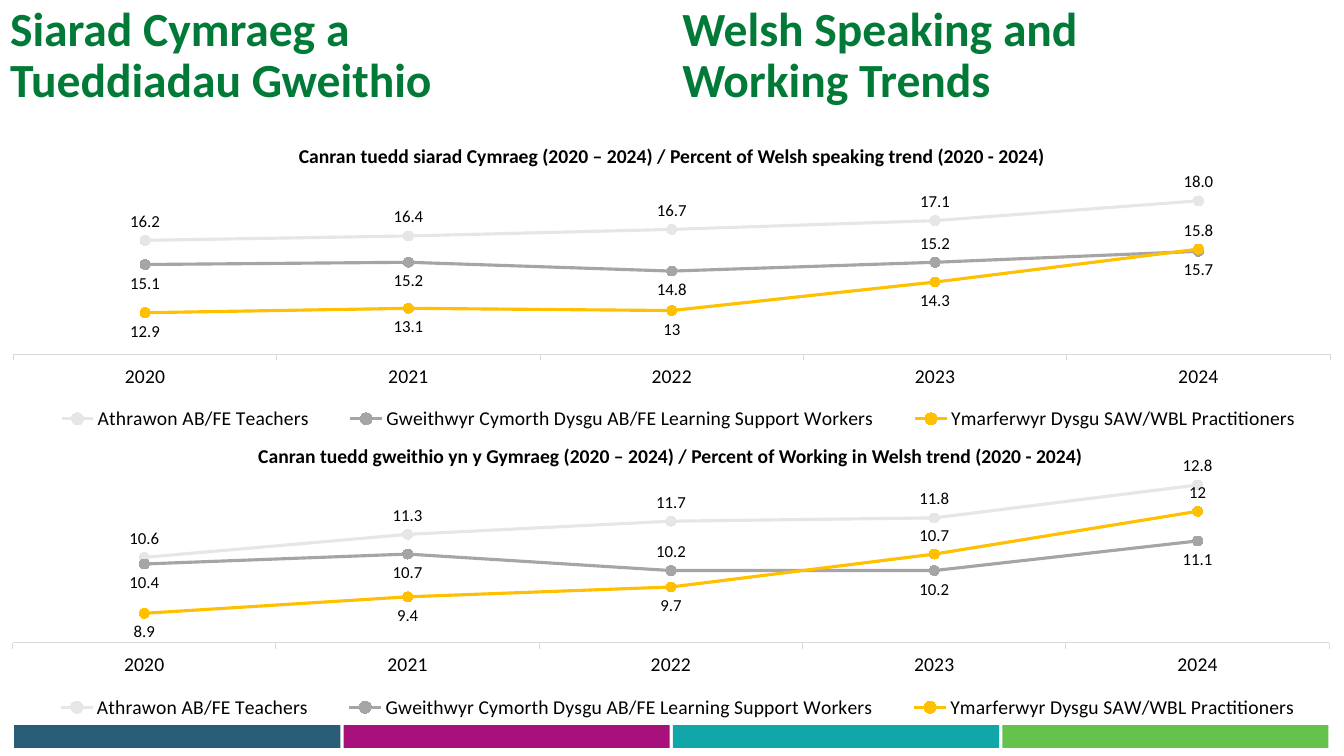
from lxml.etree import SubElement
from pptx import Presentation
from pptx.chart.data import CategoryChartData
from pptx.dml.color import RGBColor
from pptx.enum.chart import (XL_CHART_TYPE, XL_LABEL_POSITION, XL_LEGEND_POSITION,
                             XL_MARKER_STYLE, XL_TICK_MARK)
from pptx.enum.shapes import MSO_SHAPE
from pptx.enum.text import MSO_ANCHOR, MSO_AUTO_SIZE, PP_ALIGN
from pptx.oxml.ns import qn
from pptx.util import Cm, Pt

COLOURS = {
    "heading": "017A37", "text": "000000", "axis": "D9D9D9",
    "teachers": "E7E6E6", "support": "A5A5A5", "practitioners": "FFC000",
    "navy": "295D75", "magenta": "A8117C", "teal": "11A6A8", "green": "65C24C",
}
YEARS = ["2020", "2021", "2022", "2023", "2024"]
WORKFORCE = [
    ("Athrawon AB/FE Teachers", "teachers"),
    ("Gweithwyr Cymorth Dysgu AB/FE Learning Support Workers", "support"),
    ("Ymarferwyr Dysgu SAW/WBL Practitioners", "practitioners"),
]
ABOVE, BELOW = XL_LABEL_POSITION.ABOVE, XL_LABEL_POSITION.BELOW


def colour(name):
    return RGBColor.from_string(COLOURS[name])


def set_layout(parent, index, fractions, inner=False):
    for existing in parent.findall(qn("c:layout")):
        parent.remove(existing)
    layout = SubElement(parent, qn("c:layout"))
    manual = SubElement(layout, qn("c:manualLayout"))
    settings = [("layoutTarget", "inner")] if inner else []
    settings += [("xMode", "edge"), ("yMode", "edge")]
    settings += zip("xywh", fractions)
    for tag, setting in settings:
        SubElement(manual, qn(f"c:{tag}")).set("val", str(setting))
    parent.insert(index, layout)


class TrendSlide:
    typeface = "Calibri"

    def __init__(self, presentation):
        self.slide = presentation.slides.add_slide(presentation.slide_layouts[1])

    def style(self, font, size, name="text", bold=False):
        font.name = self.typeface
        font.size = Pt(size)
        font.bold = bold
        font.color.rgb = colour(name)

    def set_text(self, holder, text, size, name, align):
        frame = holder.text_frame
        frame.word_wrap = True
        frame.auto_size = MSO_AUTO_SIZE.NONE
        frame.vertical_anchor = MSO_ANCHOR.TOP
        paragraph = frame.paragraphs[0]
        properties = paragraph._p.get_or_add_pPr()
        properties.set("marL", "0")
        properties.set("indent", "0")
        SubElement(properties, qn("a:buNone"))
        paragraph.alignment = align
        paragraph.line_spacing = 0.9
        paragraph.space_before = Pt(0)
        run = paragraph.add_run()
        run.text = text
        self.style(run.font, size, name, bold=True)

    def heading(self, placeholder, text, left, width):
        placeholder.left, placeholder.top = Cm(left), Cm(0)
        placeholder.width, placeholder.height = Cm(width), Cm(3)
        self.set_text(placeholder, text, 34, "heading", PP_ALIGN.LEFT)

    def caption(self, text, left, top, width):
        box = self.slide.shapes.add_textbox(Cm(left), Cm(top), Cm(width), Cm(0.94))
        self.set_text(box, text, 14, "text", PP_ALIGN.CENTER)

    def bar(self, name, left):
        bar = self.slide.shapes.add_shape(
            MSO_SHAPE.RECTANGLE, Cm(left), Cm(18.27), Cm(8.22), Cm(0.58))
        bar.shadow.inherit = False
        bar.fill.solid()
        bar.fill.fore_color.rgb = colour(name)
        bar.line.fill.background()

    def trend(self, left, top, scale, rates, flipped):
        figures = CategoryChartData()
        figures.categories = YEARS
        for (group, _), values in zip(WORKFORCE, rates):
            figures.add_series(group, values)
        chart = self.slide.shapes.add_chart(
            XL_CHART_TYPE.LINE_MARKERS, Cm(left), Cm(top), Cm(33.86), Cm(7.54),
            figures).chart
        chart.has_title = False
        self.style(chart.font, 10)
        self.axes(chart, scale)
        self.legend(chart)
        chart.plots[0].vary_by_categories = False
        set_layout(chart._chartSpace.chart.plotArea, 0, (0.01, 0.05, 0.98, 0.66), True)
        sides = [(ABOVE, BELOW), (ABOVE, BELOW), (BELOW, ABOVE)]
        for series, (_, name), side, points in zip(
                chart.plots[0].series, WORKFORCE, sides, flipped):
            self.line(series, name)
            self.labels(series, name, side, points)

    def axes(self, chart, scale):
        rate = chart.value_axis
        rate.minimum_scale, rate.maximum_scale = scale
        rate.has_major_gridlines = False
        rate.visible = False
        year = chart.category_axis
        year.major_tick_mark = XL_TICK_MARK.OUTSIDE
        year.format.line.color.rgb = colour("axis")
        year.format.line.width = Pt(0.75)
        self.style(year.tick_labels.font, 14)

    def legend(self, chart):
        chart.has_legend = True
        legend = chart.legend
        legend.position = XL_LEGEND_POSITION.BOTTOM
        legend.include_in_layout = False
        self.style(legend.font, 14)
        set_layout(legend._element, 1, (0.02, 0.87, 0.97, 0.11))

    def line(self, series, name):
        series.smooth = False
        series.format.line.color.rgb = colour(name)
        series.format.line.width = Pt(2.25)
        series.marker.style = XL_MARKER_STYLE.CIRCLE
        series.marker.size = 7
        series.marker.format.fill.solid()
        series.marker.format.fill.fore_color.rgb = colour(name)
        series.marker.format.line.color.rgb = colour(name)

    def labels(self, series, name, side, points):
        usual, opposite = side
        labels = series.data_labels
        labels.show_value = True
        labels.position = usual
        labels.number_format = "0.0" if name == "teachers" else "General"
        labels.number_format_is_linked = False
        self.style(labels.font, 12)
        for point in points:
            label = series.points[point].data_label
            self.style(label.font, 12)
            label.position = opposite


def main():
    presentation = Presentation()
    presentation.slide_width, presentation.slide_height = Cm(33.87), Cm(19.05)
    page = TrendSlide(presentation)
    for position, name in enumerate(["navy", "magenta", "teal", "green"]):
        page.bar(name, 0.36 + 8.3 * position)

    page.trend(0, 3.58, (11, 20),
               [(16.2, 16.4, 16.7, 17.1, 18), (15.1, 15.2, 14.8, 15.2, 15.7),
                (12.9, 13.1, 13, 14.3, 15.8)],
               [(), (0, 1, 2, 4), (4,)])
    page.caption("Canran tuedd siarad Cymraeg (2020 – 2024) / "
                 "Percent of Welsh speaking trend (2020 - 2024)", 6.88, 3.58, 20.12)
    page.trend(-0.02, 10.85, (8, 14),
               [(10.6, 11.3, 11.7, 11.8, 12.8), (10.4, 10.7, 10.2, 10.2, 11.1),
                (8.9, 9.4, 9.7, 10.7, 12)],
               [(), (0, 1, 3, 4), (3, 4)])
    page.caption("Canran tuedd gweithio yn y Gymraeg (2020 – 2024) / "
                 "Percent of Working in Welsh trend (2020 - 2024)", 5.92, 11.13, 21.97)

    welsh, english = page.slide.placeholders
    page.heading(welsh, "Siarad Cymraeg a Tueddiadau Gweithio", 0, 13.26)
    page.heading(english, "Welsh Speaking and Working Trends", 16.94, 14.02)
    presentation.save("out.pptx")


if __name__ == "__main__":
    main()
